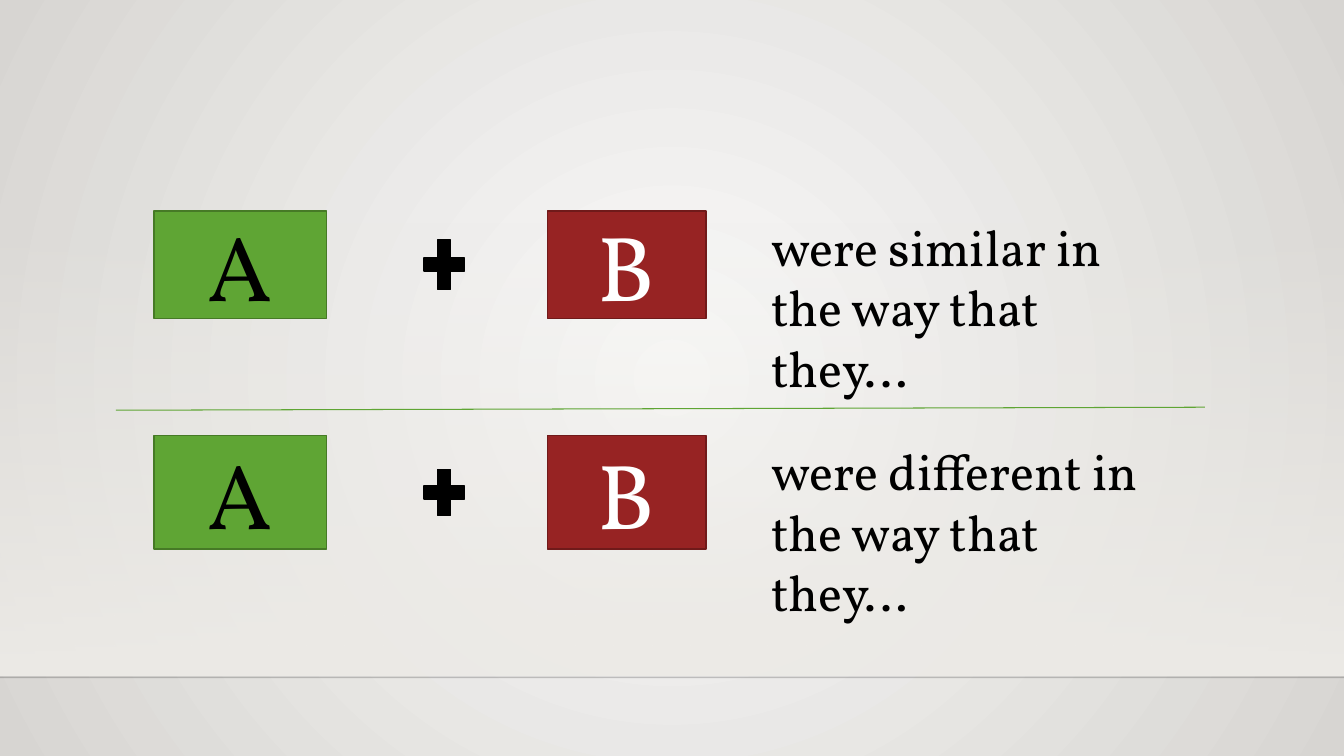
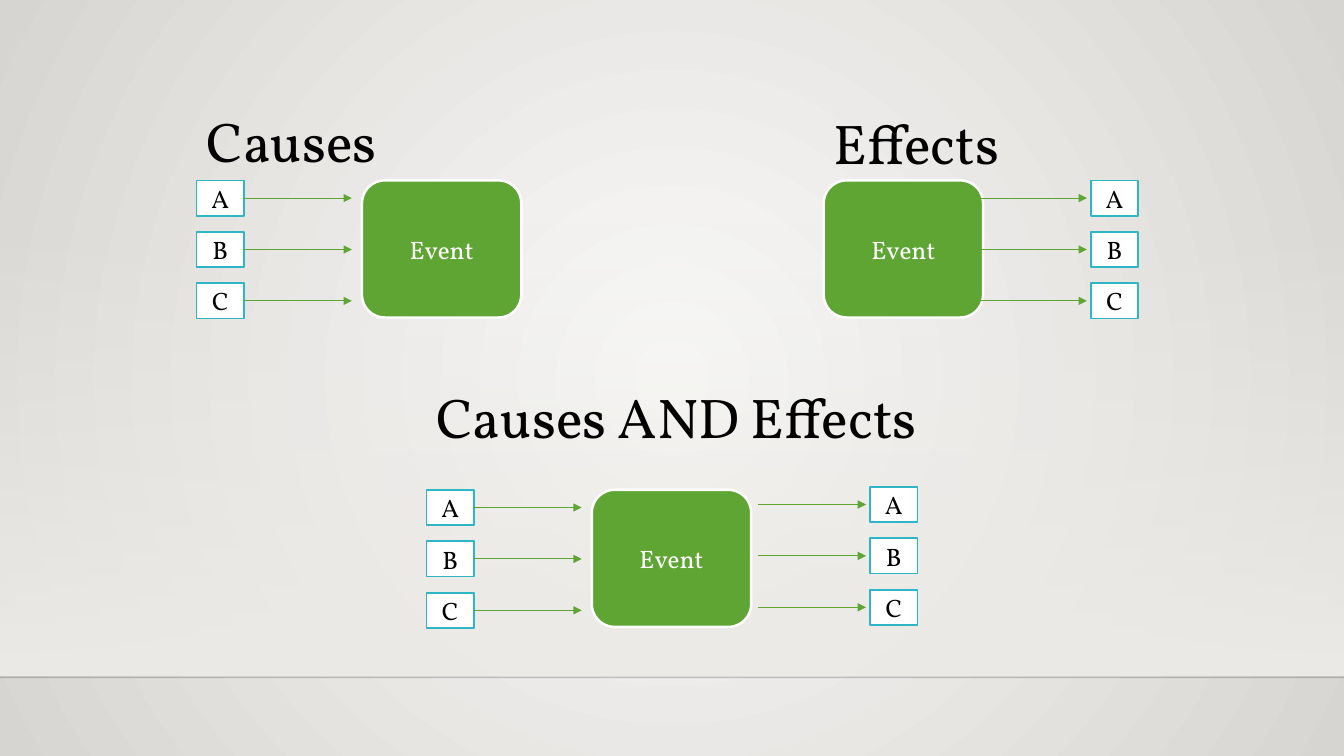
import pptx
import pptx.dml.color
import pptx.enum.shapes
import pptx.enum.text
import pptx.oxml
import pptx.oxml.ns
import pptx.util
from lxml import etree

Inches = pptx.util.Inches
Pt = pptx.util.Pt
Kind = pptx.enum.shapes.MSO_SHAPE
Align = pptx.enum.text.PP_ALIGN
qn = pptx.oxml.ns.qn

WIDE, HIGH = 13.33, 7.5
FONT = "Vollkorn"
GREEN, MOSS = "5FA534", "467A26"
RED, WINE = "972323", "701A1A"
TEAL, BLACK, WHITE = "2FB6C6", "000000", "FFFFFF"
PALE, GREY, SAND = "FAFAF9", "D7D5D2", "EDEBE7"

BOX_W, BOX_H, STEP = 0.47, 0.35, 0.51
REACH = 1.07  # length of an arrow
EVENT_W, EVENT_H = 1.58, 1.36


def paint(color, code):
    color.rgb = pptx.dml.color.RGBColor.from_string(code)


def fade(color, percent):
    """Set the opacity of a colour element."""
    etree.SubElement(color, qn("a:alpha")).set("val", str(percent * 1000))


def blend(fill, first, last):
    fill.gradient()
    for stop, code, place in zip(fill.gradient_stops, (first, last), (0, 1)):
        paint(stop.color, code)
        stop.position = place


def write(shape, text, size, code, align):
    frame = shape.text_frame
    frame.word_wrap = True
    para = frame.paragraphs[0]
    para.alignment = align
    run = para.add_run()
    run.text = text
    run.font.name = FONT
    run.font.size = Pt(size)
    paint(run.font.color, code)


def label(slide, x, y, w, h, text, size):
    box = slide.shapes.add_textbox(Inches(x), Inches(y), Inches(w), Inches(h))
    write(box, text, size, BLACK, Align.LEFT)
    box.text_frame.auto_size = pptx.enum.text.MSO_AUTO_SIZE.SHAPE_TO_FIT_TEXT


def block(slide, kind, x, y, w, h, fill, edge, weight=1.25):
    shape = slide.shapes.add_shape(kind, Inches(x), Inches(y), Inches(w), Inches(h))
    shape.shadow.inherit = False
    shape.fill.solid()
    paint(shape.fill.fore_color, fill)
    paint(shape.line.color, edge)
    shape.line.width = Pt(weight)
    return shape


def rule(slide, x1, y1, x2, y2, code, weight=0.75, arrow=False):
    line = slide.shapes.add_connector(
        pptx.enum.shapes.MSO_CONNECTOR.STRAIGHT,
        Inches(x1), Inches(y1), Inches(x2), Inches(y2))
    paint(line.line.color, code)
    line.line.width = Pt(weight)
    props = line.element.spPr
    if arrow:
        etree.SubElement(props.find(qn("a:ln")), qn("a:tailEnd")).set("type", "triangle")
    etree.SubElement(props, qn("a:effectLst"))
    return line


def base(deck):
    """Add a slide with the shared backdrop, floor band and floor line."""
    slide = deck.slides.add_slide(deck.slide_layouts[6])
    blend(slide.background.fill, PALE, GREY)
    grad = slide.element.find(".//" + qn("a:gradFill"))
    grad.remove(grad.find(qn("a:lin")))
    ring = etree.SubElement(grad, qn("a:path"), {"path": "circle"})
    etree.SubElement(ring, qn("a:fillToRect"), dict.fromkeys("ltrb", "50000"))

    band = block(slide, Kind.RECTANGLE, 0, 2.2, WIDE, 4.5, SAND, SAND)
    band.line.fill.background()
    blend(band.fill, SAND, SAND)
    band.fill.gradient_angle = 270
    fade(band.element.find(".//" + qn("a:srgbClr")), 0)

    floor = rule(slide, 0, 6.72, WIDE, 6.72, "000001", 1)
    fade(floor.element.find(".//" + qn("a:srgbClr")), 20)
    return slide


def pair(slide, x, y, h, plus_h, text):
    """Draw one row: A plus B, then the sentence starter."""
    tiles = (("A", 0, 1.71, GREEN, MOSS, BLACK), ("B", 3.9, 1.57, RED, WINE, WHITE))
    for name, dx, w, fill, edge, ink in tiles:
        tile = block(slide, Kind.RECTANGLE, x + dx, y, w, h, fill, edge)
        write(tile, name, 66, ink, Align.CENTER)
    block(slide, Kind.MATH_PLUS, x + 2.6, y + (h - plus_h) / 2, 0.55, plus_h, BLACK, BLACK)
    label(slide, x + 6.02, y, 4.2, 1.31, text, 36)


def ladder(slide, x, y, start):
    """Draw boxes A to C at x and their arrows, which begin at start."""
    for i, name in enumerate("ABC"):
        top = y + i * STEP
        mid = top + BOX_H / 2
        box = block(slide, Kind.RECTANGLE, x, top, BOX_W, BOX_H, WHITE, TEAL)
        write(box, name, 18, BLACK, Align.CENTER)
        rule(slide, start, mid, start + REACH, mid, GREEN, arrow=True)


def event(slide, x, y):
    shape = block(slide, Kind.ROUNDED_RECTANGLE, x, y, EVENT_W, EVENT_H, GREEN, WHITE, 1.75)
    write(shape, "Event", 18, WHITE, Align.CENTER)


def causes(slide, x, y):
    ladder(slide, x, y, x + BOX_W)
    event(slide, x + 1.64, y)


def effects(slide, x, y):
    ladder(slide, x, y, x - REACH - 0.04)


def compare(deck):
    slide = base(deck)
    pair(slide, 1.53, 2.09, 1.07, 0.67, "were similar in the way that they…")
    pair(slide, 1.53, 4.32, 1.13, 0.62, "were different in the way that they…")
    rule(slide, 1.15, 4.07, 11.95, 4.04, GREEN)


def chains(deck):
    slide = base(deck)
    label(slide, 1.95, 1.01, 2.04, 0.77, "Causes", 40)
    causes(slide, 1.95, 1.79)

    label(slide, 8.17, 1.03, 1.95, 0.77, "Effects", 40)
    event(slide, 8.17, 1.79)
    effects(slide, 10.82, 1.79)

    label(slide, 4.23, 3.75, 5.89, 0.77, "Causes AND Effects", 40)
    causes(slide, 4.23, 4.86)
    effects(slide, 8.63, 4.83)


def main():
    deck = pptx.Presentation()
    deck.slide_width, deck.slide_height = Inches(WIDE), Inches(HIGH)
    compare(deck)
    chains(deck)
    deck.save("out.pptx")


if __name__ == "__main__":
    main()
